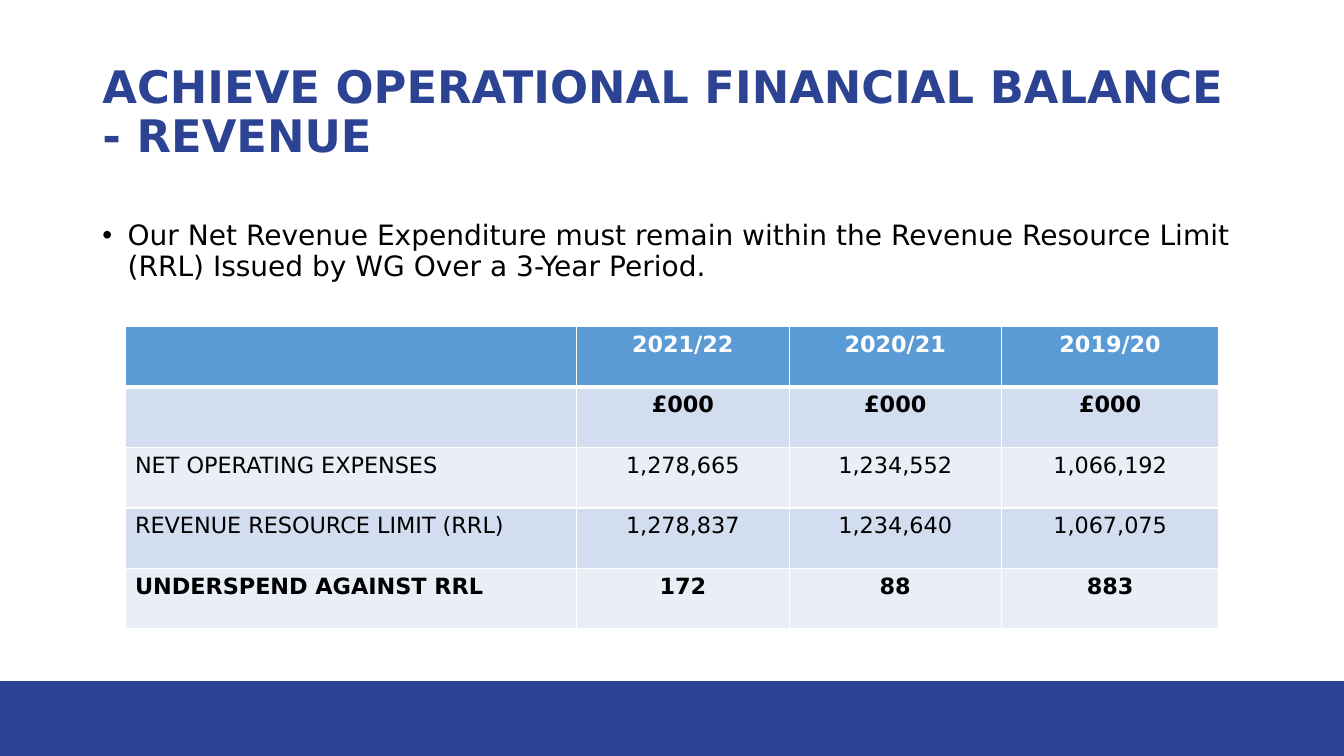
"""Build the revenue financial balance slide."""
from lxml import etree
from pptx import Presentation
from pptx.dml.color import RGBColor
from pptx.enum.shapes import MSO_SHAPE
from pptx.enum.text import MSO_ANCHOR, MSO_AUTO_SIZE, PP_ALIGN
from pptx.oxml.ns import qn
from pptx.util import Pt

RECT = MSO_SHAPE.RECTANGLE
TOP, MIDDLE = MSO_ANCHOR.TOP, MSO_ANCHOR.MIDDLE
NO_FIT = MSO_AUTO_SIZE.NONE
LEFT, CENTER = PP_ALIGN.LEFT, PP_ALIGN.CENTER
FONT = "DejaVu Sans"
COLORS = {
    "navy": "2C4393", "header": "5B9BD5", "band": "D2DEEF",
    "light": "EAEFF7", "white": "FFFFFF", "black": "000000",
}


def rgb(name):
    return RGBColor.from_string(COLORS[name])


def write(tf, text, size, color, bold=False, align=LEFT):
    tf.text = text
    p = tf.paragraphs[0]
    p.alignment = align
    p.space_before = Pt(0)
    for r in p.runs:
        r.font.name = FONT
        r.font.size = Pt(size)
        r.font.bold = bold
        r.font.color.rgb = rgb(color)
    return p


prs = Presentation()
prs.slide_width, prs.slide_height = Pt(960), Pt(540)
s = prs.slides.add_slide(prs.slide_layouts[1])

footer = s.shapes.add_shape(RECT, Pt(0), Pt(486.5), Pt(960), Pt(53.5))
footer.shadow.inherit = False
footer.fill.solid()
footer.fill.fore_color.rgb = rgb("navy")
footer.line.fill.background()

title, body = s.shapes.title, s.placeholders[1]
for sp, top, height, anchor in ((title, 28.75, 104.4, MIDDLE), (body, 154.8, 314.6, TOP)):
    sp.left, sp.top, sp.width, sp.height = Pt(66), Pt(top), Pt(828), Pt(height)
    sp.text_frame.word_wrap = True
    sp.text_frame.auto_size = NO_FIT
    sp.text_frame.vertical_anchor = anchor

p = write(title.text_frame, "ACHIEVE OPERATIONAL FINANCIAL BALANCE - REVENUE", 32, "navy", True)
p.line_spacing = 0.9

p = write(body.text_frame,
          "Our Net Revenue Expenditure must remain within the Revenue Resource Limit "
          "(RRL) Issued by WG Over a 3-Year Period.", 20, "black")
pPr = p._p.get_or_add_pPr()
pPr.set("marL", str(Pt(18)))
pPr.set("indent", str(Pt(-18)))
etree.SubElement(pPr, qn("a:buFont"), typeface="Arial")
etree.SubElement(pPr, qn("a:buChar"), char="•")
p.line_spacing = 0.9

rows = [
    ("", "2021/22", "2020/21", "2019/20"),
    ("", "£000", "£000", "£000"),
    ("NET OPERATING EXPENSES", "1,278,665", "1,234,552", "1,066,192"),
    ("REVENUE RESOURCE LIMIT (RRL)", "1,278,837", "1,234,640", "1,067,075"),
    ("UNDERSPEND AGAINST RRL", "172", "88", "883"),
]
fills = ["header", "band", "light", "band", "light"]
bold_rows = (0, 1, 4)
col_widths = [322.5, 152, 151.5, 155.5]

table = s.shapes.add_table(len(rows), len(col_widths), Pt(89.25), Pt(233.25),
                           Pt(sum(col_widths)), Pt(216)).table
for col, width in zip(table.columns, col_widths):
    col.width = Pt(width)
for i, row in enumerate(rows):
    table.rows[i].height = Pt(43.2)
    for j, text in enumerate(row):
        cell = table.cell(i, j)
        cell.margin_left = cell.margin_right = Pt(7.2)
        cell.margin_top = cell.margin_bottom = Pt(3.6)
        write(cell.text_frame, text, 16, "black" if i else "white",
              i in bold_rows, CENTER if j else LEFT)
        cell.fill.solid()
        cell.fill.fore_color.rgb = rgb(fills[i])
        tcPr = cell._tc.get_or_add_tcPr()
        for k, side in enumerate(("lnL", "lnR", "lnT", "lnB")):
            thick = (i, side) in ((0, "lnB"), (1, "lnT"))
            ln = etree.Element(qn(f"a:{side}"), w=str(Pt(3 if thick else 1)))
            fill = etree.SubElement(ln, qn("a:solidFill"))
            etree.SubElement(fill, qn("a:srgbClr"), val=COLORS["white"])
            tcPr.insert(k, ln)

prs.save("out.pptx")
